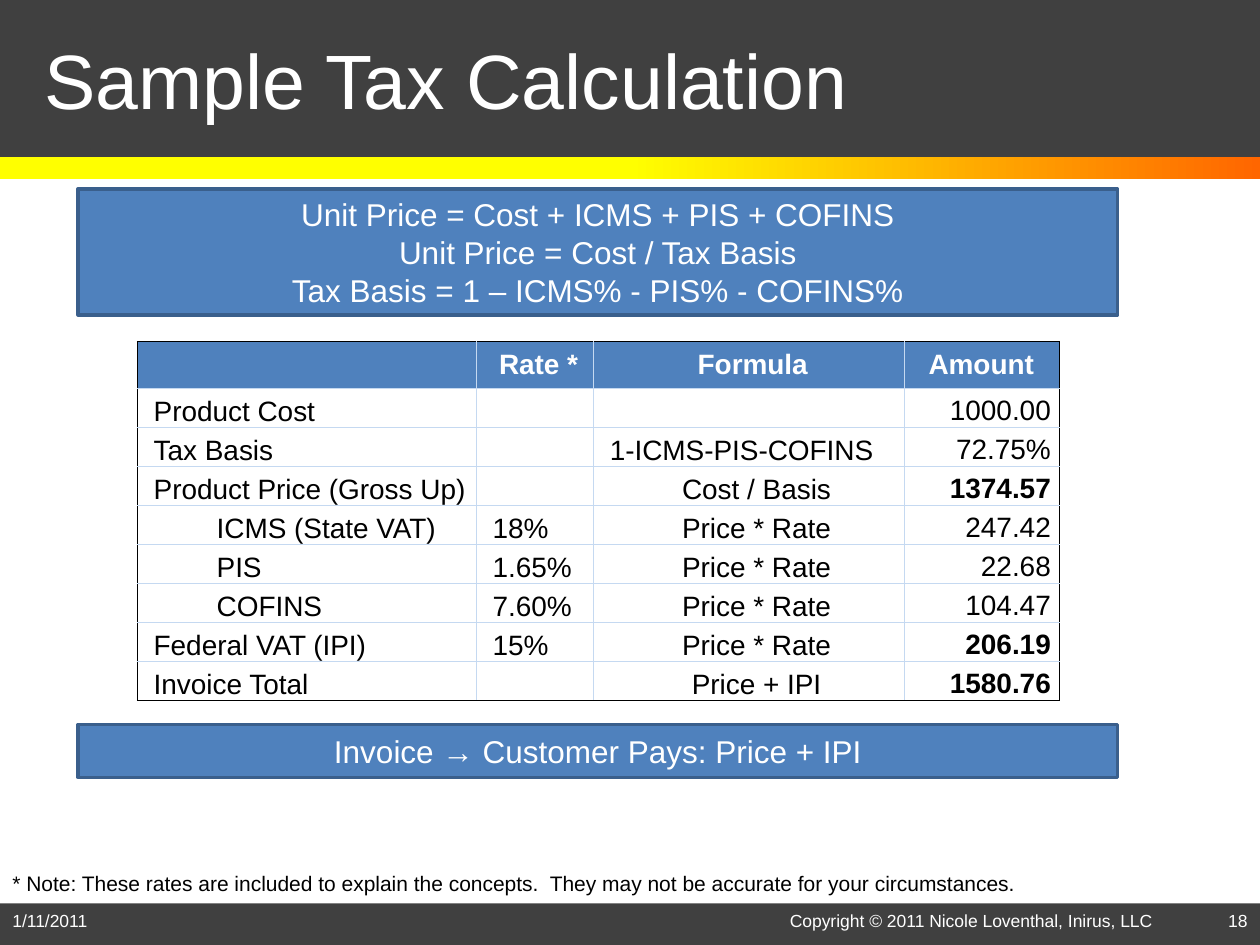
import pptx
import pptx.util
import pptx.dml.color
import pptx.enum.shapes
import pptx.enum.text
import pptx.oxml.ns
from lxml import etree

Inches = pptx.util.Inches
Pt = pptx.util.Pt
RGBColor = pptx.dml.color.RGBColor
ALIGN = pptx.enum.text.PP_ALIGN
ANCHOR = pptx.enum.text.MSO_ANCHOR

WHITE = RGBColor(0xFF, 0xFF, 0xFF)
BLACK = RGBColor(0, 0, 0)
CHARCOAL = RGBColor(0x40, 0x40, 0x40)
YELLOW = RGBColor(0xFF, 0xFF, 0x00)
ORANGE = RGBColor(0xFF, 0x66, 0x00)
BLUE = RGBColor(0x4F, 0x81, 0xBD)
DARK_BLUE = RGBColor(0x3A, 0x5F, 0x8C)
PALE_BLUE = RGBColor(0xC5, 0xD9, 0xF1)

COLUMN_WIDTHS = [2.69, 0.93, 2.47, 1.23]
HEADER_HEIGHT = 0.35
ROW_HEIGHT = 0.31
HEADERS = ["", "Rate *", "Formula", "Amount"]
ROWS = [
    ["Product Cost", "", "", "1000.00"],
    ["Tax Basis", "", "1-ICMS-PIS-COFINS", "72.75%"],
    ["Product Price (Gross Up)", "", "Cost / Basis", "1374.57"],
    ["ICMS (State VAT)", "18%", "Price * Rate", "247.42"],
    ["PIS", "1.65%", "Price * Rate", "22.68"],
    ["COFINS", "7.60%", "Price * Rate", "104.47"],
    ["Federal VAT (IPI)", "15%", "Price * Rate", "206.19"],
    ["Invoice Total", "", "Price + IPI", "1580.76"],
]
SUB_TAXES = {"ICMS (State VAT)", "PIS", "COFINS"}
BOLD_AMOUNTS = {"1374.57", "206.19", "1580.76"}


def write_text(frame, text, size=18, color=WHITE, bold=False,
               align=ALIGN.LEFT, anchor=ANCHOR.TOP, indent=0, level=0):
    frame.vertical_anchor = anchor
    for index, line in enumerate(text.split("\n")):
        paragraph = frame.add_paragraph() if index else frame.paragraphs[0]
        paragraph.alignment = align
        paragraph.level = level
        if indent:
            properties = paragraph._p.get_or_add_pPr()
            properties.set("marL", str(Inches(indent)))
            properties.set("indent", "0")
        run = paragraph.add_run()
        run.text = line
        run.font.name = "Arial"
        run.font.size = Pt(size)
        run.font.bold = bold
        run.font.color.rgb = color


def add_rectangle(slide, left, top, width, height, fill, line=None):
    shape = slide.shapes.add_shape(
        pptx.enum.shapes.MSO_SHAPE.RECTANGLE,
        Inches(left), Inches(top), Inches(width), Inches(height))
    shape.shadow.inherit = False
    shape.fill.solid()
    shape.fill.fore_color.rgb = fill
    if line is None:
        shape.line.fill.background()
    else:
        shape.line.color.rgb = line
        shape.line.width = Pt(2)
    return shape


def add_gradient_band(slide):
    band = add_rectangle(slide, 0, 1.25, 10, 0.17, YELLOW)
    band.fill.gradient()
    band.fill.gradient_angle = 0
    stops = band.fill.gradient_stops
    for stop, position, color in zip(stops, (0.5, 1), (YELLOW, ORANGE)):
        stop.position = position
        stop.color.rgb = color


def add_text(slide, left, top, width, height, text, wrap=True, **text_format):
    box = slide.shapes.add_textbox(
        Inches(left), Inches(top), Inches(width), Inches(height))
    box.text_frame.word_wrap = wrap
    write_text(box.text_frame, text, **text_format)
    return box


def add_title(slide, text):
    title = slide.shapes.title
    title.left, title.top = Inches(0.25), Inches(0)
    title.width, title.height = Inches(9), Inches(1.25)
    write_text(title.text_frame, text, size=44, anchor=ANCHOR.MIDDLE)
    title.element.getparent().append(title.element)


def add_formula_box(slide, top, height, text):
    box = add_rectangle(slide, 0.62, top, 8.25, height, BLUE, line=DARK_BLUE)
    write_text(box.text_frame, text, align=ALIGN.CENTER, anchor=ANCHOR.MIDDLE)


def set_borders(cell, borders):
    properties = cell._tc.get_or_add_tcPr()
    for index, (side, (color, width)) in enumerate(borders.items()):
        line = etree.Element(pptx.oxml.ns.qn("a:ln" + side), w=str(Pt(width)))
        fill = etree.SubElement(line, pptx.oxml.ns.qn("a:solidFill"))
        etree.SubElement(fill, pptx.oxml.ns.qn("a:srgbClr"), val=str(color))
        properties.insert(index, line)


def set_insets(cell, left, top, right, bottom):
    cell.margin_left, cell.margin_top = Inches(left), Inches(top)
    cell.margin_right, cell.margin_bottom = Inches(right), Inches(bottom)


def text_format_for(text, row, column):
    if row == 0:
        if column == 3:
            return {"bold": True, "indent": 0.12}
        return {"bold": True, "align": ALIGN.CENTER}
    if column == 3:
        return {"color": BLACK, "align": ALIGN.RIGHT,
                "bold": text in BOLD_AMOUNTS}
    if text in SUB_TAXES:
        return {"color": BLACK, "indent": 0.56, "level": 1}
    centered = column == 2 and text != "1-ICMS-PIS-COFINS"
    return {"color": BLACK, "indent": 0.06,
            "align": ALIGN.CENTER if centered else ALIGN.LEFT}


def fill_cell(cell, text, row, column):
    if row == 0:
        cell.fill.solid()
        cell.fill.fore_color.rgb = BLUE
        set_insets(cell, 0.07, 0.05, 0.01, 0.05)
        cell.vertical_anchor = ANCHOR.MIDDLE
    else:
        cell.fill.background()
        if column == 3:
            set_insets(cell, 0.07, 0.01, 0.07, 0.01)
        else:
            set_insets(cell, 0.07, 0.01, 0.01, 0)
        cell.vertical_anchor = ANCHOR.BOTTOM
    if text:
        write_text(cell.text_frame, text, size=16, anchor=cell.vertical_anchor,
                   **text_format_for(text, row, column))
    else:
        cell.text_frame.paragraphs[0].font.size = Pt(16)
    inner, outer = (PALE_BLUE, 0.5), (BLACK, 0.5)
    set_borders(cell, {
        "L": outer if column == 0 else inner,
        "R": (BLACK, 1) if column == 3 else inner,
        "T": outer if row == 0 else inner,
        "B": outer if row == len(ROWS) else inner,
    })


def add_tax_table(slide):
    content = [HEADERS] + ROWS
    table = slide.shapes.add_table(
        len(content), len(HEADERS), Inches(1.09), Inches(2.71),
        Inches(sum(COLUMN_WIDTHS)),
        Inches(HEADER_HEIGHT + ROW_HEIGHT * len(ROWS))).table
    table.first_row = False
    table.horz_banding = False
    for column, width in zip(table.columns, COLUMN_WIDTHS):
        column.width = Inches(width)
    for row, texts in enumerate(content):
        table.rows[row].height = Inches(ROW_HEIGHT if row else HEADER_HEIGHT)
        for column, text in enumerate(texts):
            fill_cell(table.cell(row, column), text, row, column)


def main():
    presentation = pptx.Presentation()
    presentation.slide_width = Inches(10)
    presentation.slide_height = Inches(7.5)
    slide = presentation.slides.add_slide(presentation.slide_layouts[5])

    add_rectangle(slide, 0, 0, 10, 1.25, CHARCOAL)
    add_rectangle(slide, 0, 7.17, 10, 0.33, CHARCOAL)
    add_gradient_band(slide)
    add_text(slide, 0, 7.17, 2.33, 0.33, "1/11/2011", size=10)
    add_text(slide, 7.67, 7.17, 2.33, 0.33, "18", size=10, align=ALIGN.RIGHT)
    add_text(slide, 6.17, 7.17, 3.33, 0.33,
             "Copyright © 2011 Nicole Loventhal, Inirus, LLC", size=10)
    add_title(slide, "Sample Tax Calculation")

    add_formula_box(slide, 1.5, 1, "Unit Price = Cost + ICMS + PIS + COFINS\n"
                    "Unit Price = Cost / Tax Basis\n"
                    "Tax Basis = 1 – ICMS% - PIS% - COFINS%")
    add_tax_table(slide)
    add_formula_box(slide, 5.75, 0.42, "Invoice → Customer Pays: Price + IPI")
    note = add_text(slide, 0, 6.86, 8.24, 0.3,
                    "* Note: These rates are included to explain the concepts.  "
                    "They may not be accurate for your circumstances.",
                    wrap=False, size=12, color=BLACK)
    note.text_frame.auto_size = pptx.enum.text.MSO_AUTO_SIZE.SHAPE_TO_FIT_TEXT
    presentation.save("out.pptx")


if __name__ == "__main__":
    main()
